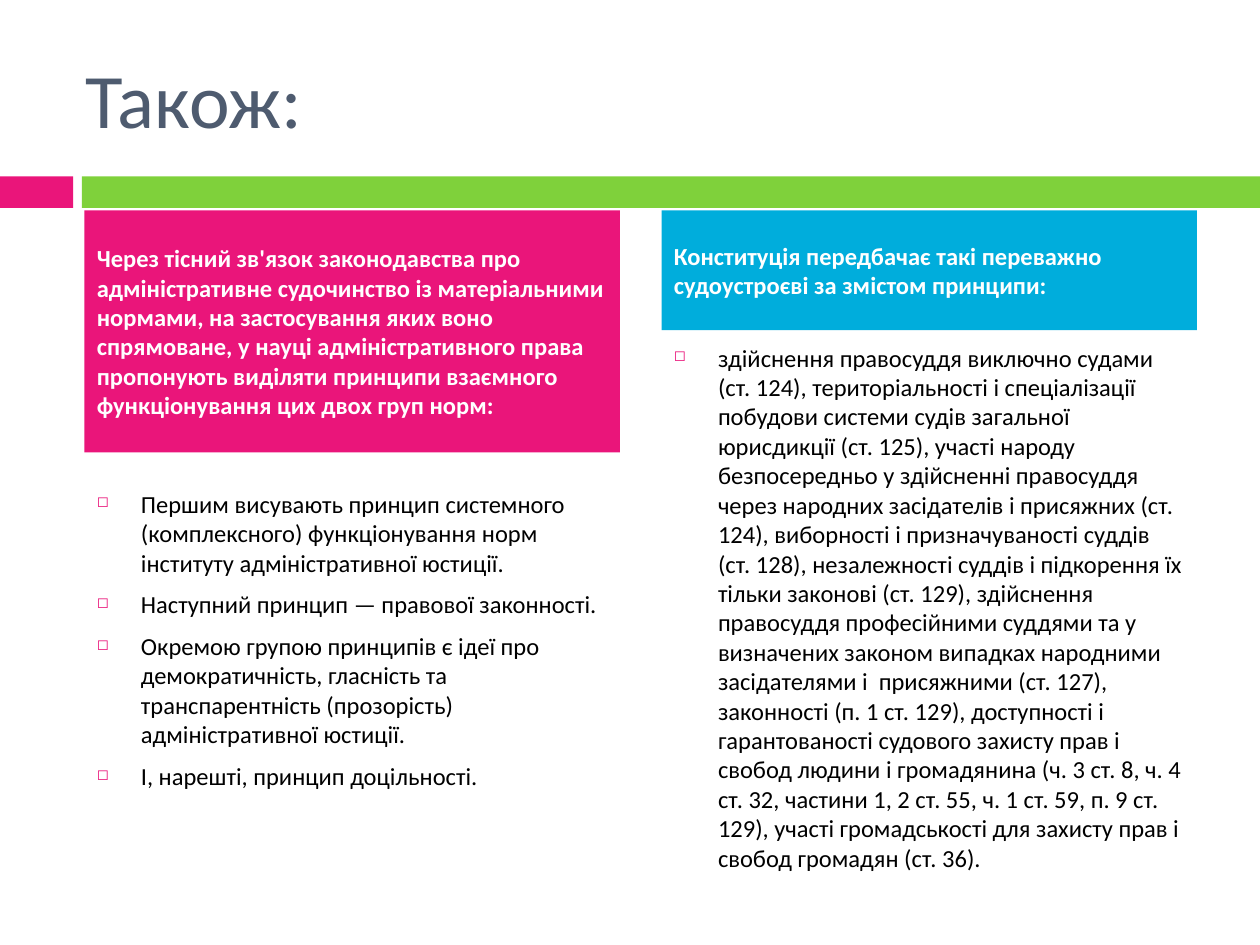
from lxml import etree
from pptx import Presentation
from pptx.dml.color import RGBColor
from pptx.enum.shapes import MSO_SHAPE
from pptx.enum.text import MSO_ANCHOR, PP_ALIGN
from pptx.oxml.ns import qn
from pptx.util import Inches, Pt

RECTANGLE = MSO_SHAPE.RECTANGLE
TOP, MIDDLE = MSO_ANCHOR.TOP, MSO_ANCHOR.MIDDLE
LEFT = PP_ALIGN.LEFT

THEME = {
    "font": "Calibri",
    "pink": "EA157A",
    "green": "7FD13B",
    "blue": "00ADDC",
    "slate": "4E5B6F",
    "black": "000000",
    "white": "FFFFFF",
    "title_size": 44,
    "text_size": 14,
    "space_before": 7,
}

TITLE = "Також:"
BANDS = [(0, 0.58, "pink"), (0.65, 9.35, "green")]
COLUMNS = [
    {
        "heading": "Через тісний зв'язок законодавства про адміністративне судочинство із "
                   "матеріальними нормами, на застосування яких воно спрямоване, у науці "
                   "адміністративного права пропонують виділяти принципи взаємного "
                   "функціонування цих двох груп норм:",
        "fill": "pink",
        "heading_height": 1.92,
        "list_top": 3.83,
        "list_height": 3.33,
        "principles": [
            "Першим висувають принцип системного (комплексного) функціонування норм "
            "інституту адміністративної юстиції.",
            "Наступний принцип — правової законності.",
            "Окремою групою принципів є ідеї про демократичність, гласність та "
            "транспарентність (прозорість) адміністративної юстиції.",
            "І, нарешті, принцип доцільності.",
        ],
    },
    {
        "heading": "Конституція передбачає такі переважно судоустроєві за змістом принципи:",
        "fill": "blue",
        "heading_height": 0.95,
        "list_top": 2.67,
        "list_height": 4.58,
        "principles": [
            "здійснення правосуддя виключно судами (ст. 124), територіальності і "
            "спеціалізації побудови системи судів загальної юрисдикції (ст. 125), участі "
            "народу безпосередньо у здійсненні правосуддя через народних засідателів і "
            "присяжних (ст. 124), виборності і призначуваності суддів (ст. 128), "
            "незалежності суддів і підкорення їх тільки законові (ст. 129), здійснення "
            "правосуддя професійними суддями та у визначених законом випадках народними "
            "засідателями і  присяжними (ст. 127), законності (п. 1 ст. 129), доступності і "
            "гарантованості судового захисту прав і свобод людини і громадянина (ч. 3 ст. 8, "
            "ч. 4 ст. 32, частини 1, 2 ст. 55, ч. 1 ст. 59, п. 9 ст. 129), участі "
            "громадськості для захисту прав і свобод громадян (ст. 36).",
        ],
    },
]
COLUMN_LEFT, COLUMN_WIDTH, COLUMN_PITCH = 0.67, 4.25, 4.58
HEADING_TOP = 1.67
BULLET_INDENT = 0.35


def color(name):
    return RGBColor.from_string(THEME[name])


def add_bar(slide, left, top, width, height, fill):
    bar = slide.shapes.add_shape(RECTANGLE, *map(Inches, (left, top, width, height)))
    bar.shadow.inherit = False
    bar.fill.solid()
    bar.fill.fore_color.rgb = color(fill)
    bar.line.fill.background()
    return bar


def add_box(slide, left, top, width, height):
    return slide.shapes.add_textbox(*map(Inches, (left, top, width, height)))


def write(holder, lines, ink, size="text_size", anchor=TOP, bold=False, space=0):
    frame = holder.text_frame
    frame.word_wrap = True
    frame.vertical_anchor = anchor
    frame.text = "\n".join(lines)
    for paragraph in frame.paragraphs:
        paragraph.alignment = LEFT
        paragraph.space_before = Pt(space)
        for run in paragraph.runs:
            run.font.name = THEME["font"]
            run.font.size = Pt(THEME[size])
            run.font.bold = bold
            run.font.color.rgb = color(ink)
    return frame


def add_bullet(paragraph):
    properties = paragraph._p.get_or_add_pPr()
    properties.set("marL", str(Inches(BULLET_INDENT)))
    properties.set("indent", str(-Inches(BULLET_INDENT)))
    tint = etree.SubElement(properties, qn("a:buClr"))
    etree.SubElement(tint, qn("a:srgbClr"), val=THEME["pink"])
    etree.SubElement(properties, qn("a:buSzPct"), val="60000")
    etree.SubElement(properties, qn("a:buChar"), char="◻")


def add_column(slide, left, column):
    principles = add_box(slide, left, column["list_top"], COLUMN_WIDTH, column["list_height"])
    frame = write(principles, column["principles"], "black", space=THEME["space_before"])
    for paragraph in frame.paragraphs:
        add_bullet(paragraph)
    heading = add_bar(slide, left, HEADING_TOP, COLUMN_WIDTH,
                      column["heading_height"], column["fill"])
    write(heading, [column["heading"]], "white", anchor=MIDDLE, bold=True,
          space=THEME["space_before"])


def main():
    """Build the slide on principles of administrative justice."""
    deck = Presentation()
    deck.slide_width, deck.slide_height = Inches(10), Inches(7.5)
    slide = deck.slides.add_slide(deck.slide_layouts[6])
    for left, width, fill in BANDS:
        add_bar(slide, left, 1.4, width, 0.25, fill)
    write(add_box(slide, 0.58, 0.3, 8.92, 0.95), [TITLE], "slate", "title_size", MIDDLE)
    for index, column in enumerate(COLUMNS):
        add_column(slide, COLUMN_LEFT + index * COLUMN_PITCH, column)
    deck.save("out.pptx")


if __name__ == "__main__":
    main()
